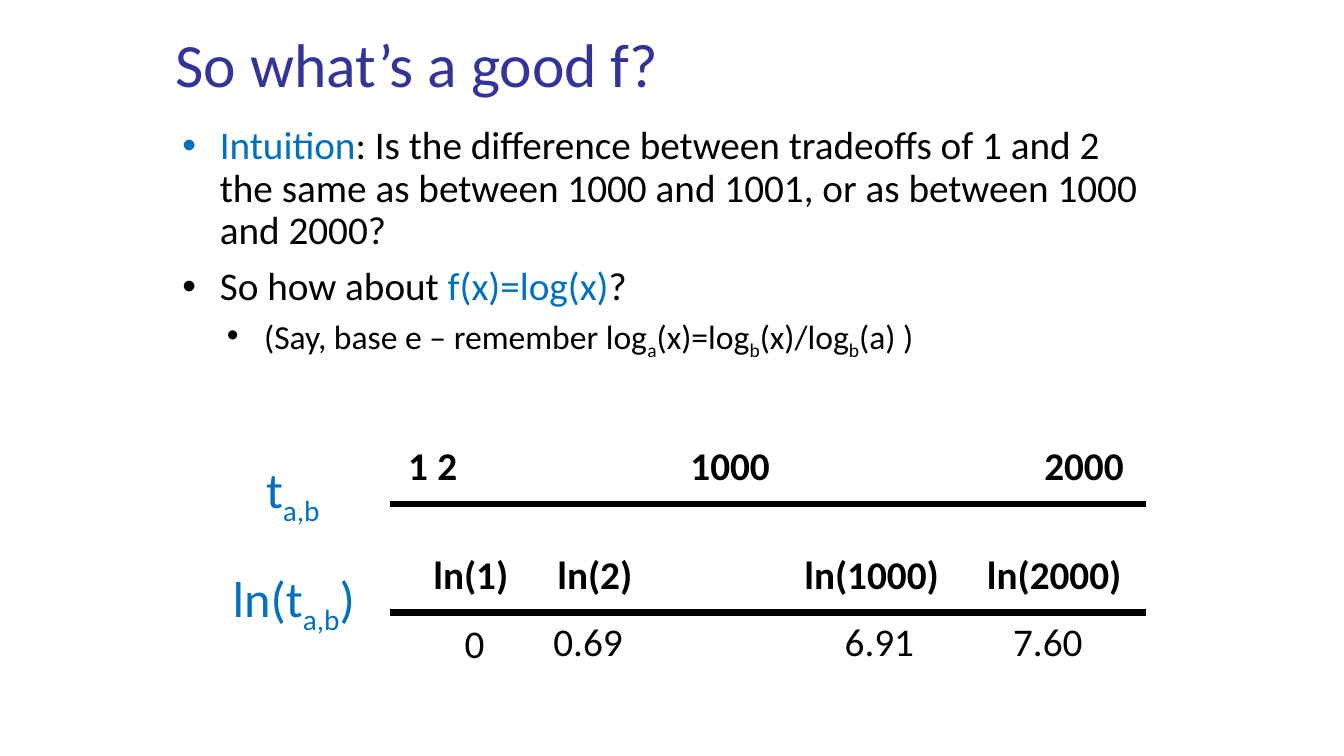
from lxml import etree
from pptx import Presentation
from pptx import util as u
from pptx.dml.color import RGBColor
from pptx.enum import shapes, text
from pptx.oxml.ns import qn

PX = 9144
FONT = "Calibri"
COLORS = {"title": "333399", "accent": "0070C0", "ink": "000000"}
SUBSCRIPT = "-25000"


def px(value):
    return u.Emu(value * PX)


def add_span(para, words, size, color="ink", bold=False, sub=False):
    span = para.add_run()
    span.text = words
    span.font.name = FONT
    span.font.size = u.Pt(size)
    span.font.bold = bold
    span.font.color.rgb = RGBColor.from_string(COLORS[color])
    if sub:
        span._r.get_or_add_rPr().set("baseline", SUBSCRIPT)


def add_box(page, left, top, width, height):
    box = page.shapes.add_textbox(px(left), px(top), px(width), px(height))
    return box.text_frame


def add_block(page, left, top, width, height):
    frame = add_box(page, left, top, width, height)
    frame.word_wrap = True
    frame.margin_left = frame.margin_right = 0
    frame.margin_top = frame.margin_bottom = 0
    return frame


def add_label(page, left, top, width, height, spans, size, **style):
    frame = add_box(page, left, top, width, height)
    frame.word_wrap = False
    frame.auto_size = text.MSO_AUTO_SIZE.SHAPE_TO_FIT_TEXT
    for words, sub in spans:
        add_span(frame.paragraphs[0], words, size, sub=sub, **style)


def add_title(page, words):
    frame = add_block(page, 174, 17, 1000, 99)
    frame.vertical_anchor = text.MSO_ANCHOR.MIDDLE
    para = frame.paragraphs[0]
    para.line_spacing = 0.9
    add_span(para, words, 44, "title")


def format_bullet(para, level, indent, space):
    para.level = level
    para.line_spacing = 0.9
    para.space_before = u.Pt(space)
    properties = para._p.get_or_add_pPr()
    properties.set("marL", str(px(indent)))
    properties.set("indent", str(px(-37)))
    etree.SubElement(properties, qn("a:buFont")).set("typeface", "Arial")
    etree.SubElement(properties, qn("a:buChar")).set("char", "•")


def add_bullets(page):
    frame = add_block(page, 181, 125, 961, 542)

    intuition = frame.paragraphs[0]
    format_bullet(intuition, 0, 37, 0)
    add_span(intuition, "Intuition", 28, "accent")
    add_span(intuition, ": Is the difference between tradeoffs of 1 and 2 the same "
             "as between 1000 and 1001, or as between 1000 and 2000?", 28)

    proposal = frame.add_paragraph()
    format_bullet(proposal, 0, 37, 10)
    add_span(proposal, "So how about ", 28)
    add_span(proposal, "f(x)=log(x)", 28, "accent")
    add_span(proposal, "?", 28)

    remark = frame.add_paragraph()
    format_bullet(remark, 1, 81, 5)
    pieces = ["(Say, base e – remember log", "a", "(x)=log", "b",
              "(x)/log", "b", "(a) )"]
    for index, words in enumerate(pieces):
        add_span(remark, words, 24, sub=index % 2 == 1)


def add_axis(page, top):
    axis = page.shapes.add_connector(
        shapes.MSO_CONNECTOR.STRAIGHT, px(387), px(top), px(1137), px(top))
    axis.line.width = u.Pt(5)
    axis.line.color.rgb = RGBColor.from_string(COLORS["ink"])
    etree.SubElement(axis._element.spPr, qn("a:effectLst"))


def add_scale(page, axis_top, name, name_left, name_width, marks):
    add_axis(page, axis_top)
    add_label(page, name_left, axis_top - 50, name_width, 71, name, 36,
              color="accent")
    for words, left, width in marks:
        add_label(page, left, axis_top - 67, width, 57, [(words, False)], 28,
                  bold=True)


def main():
    deck = Presentation()
    deck.slide_width, deck.slide_height = px(1333), px(750)
    page = deck.slides.add_slide(deck.slide_layouts[6])

    add_title(page, "So what’s a good f?")
    add_bullets(page)

    add_scale(page, 500, [("t", False), ("a,b", True)], 254, 81, [
        ("1", 395, 40), ("2", 424, 40), ("1000", 675, 100), ("2000", 1026, 100)])
    add_scale(page, 608, [("ln(t", False), ("a,b", True), (")", False)], 221, 147, [
        ("ln(1)", 420, 95), ("ln(2)", 543, 95),
        ("ln(1000)", 788, 155), ("ln(2000)", 969, 155)])

    for words, left, top, width in [("0", 451, 609, 40), ("0.69", 539, 608, 90),
                                    ("6.91", 828, 608, 90), ("7.60", 995, 608, 90)]:
        add_label(page, left, top, width, 57, [(words, False)], 28)

    deck.save("out.pptx")


if __name__ == "__main__":
    main()
